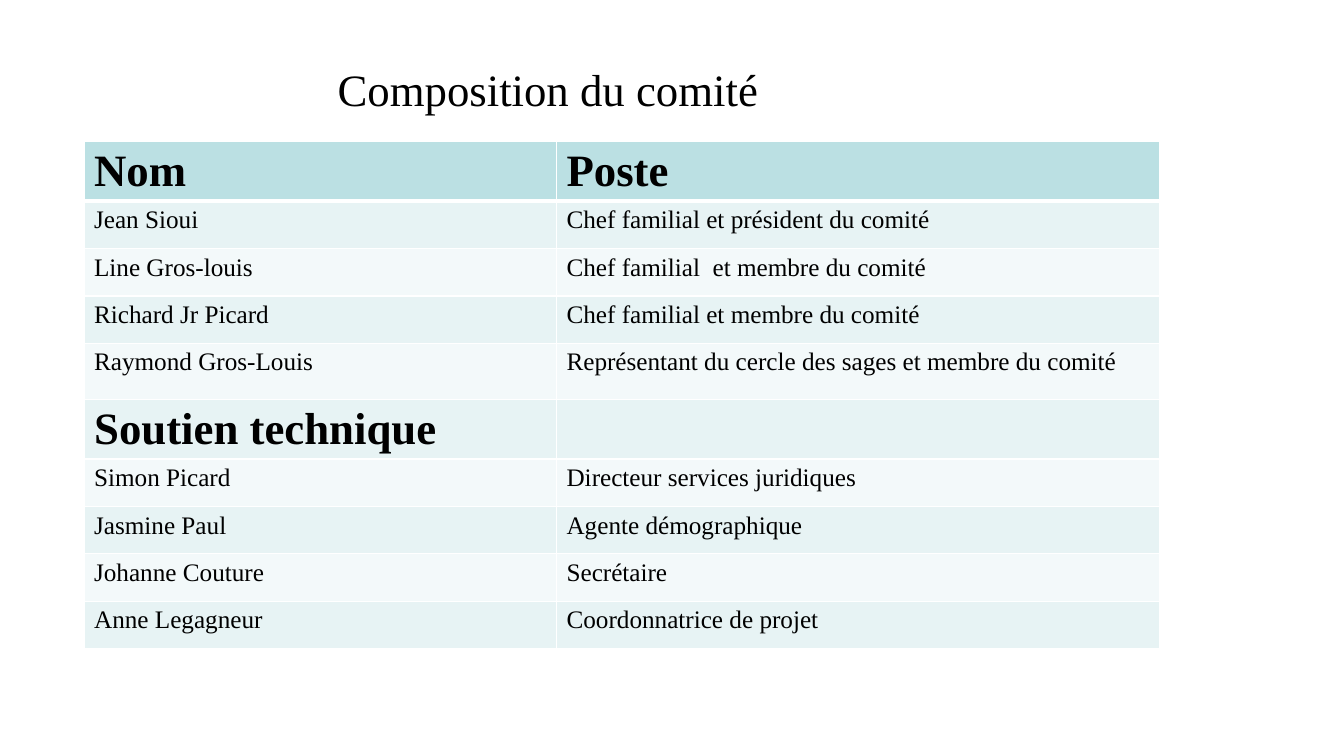
from pptx import Presentation
from pptx.dml.color import RGBColor
from pptx.enum.text import MSO_ANCHOR, PP_ALIGN
from pptx.oxml import parse_xml
from pptx.oxml.ns import nsdecls
from pptx.util import Pt

FONT = "Times New Roman"
INK, WHITE = "000000", "FFFFFF"
HEADER_FILL = "BBE0E3"
BAND_FILLS = ("F3F9FA", "E7F3F4")  # even rows, odd rows

HEADING = {"size": Pt(32), "bold": True}
ENTRY = {"size": Pt(18), "bold": False}

MEMBERS = [
    ("Nom", "Poste"),
    ("Jean Sioui", "Chef familial et président du comité"),
    ("Line Gros-louis", "Chef familial  et membre du comité"),
    ("Richard Jr Picard", "Chef familial et membre du comité"),
    ("Raymond Gros-Louis", "Représentant du cercle des sages et membre du comité"),
    ("Soutien technique", ""),
    ("Simon Picard", "Directeur services juridiques"),
    ("Jasmine Paul", "Agente démographique"),
    ("Johanne Couture", "Secrétaire"),
    ("Anne Legagneur", "Coordonnatrice de projet"),
]
HEADING_ROWS = (0, 5)
TALL_ROW = 4


def color(value):
    return RGBColor.from_string(value)


def style_text(paragraph, align, **font_values):
    paragraph.alignment = align
    paragraph.font.color.rgb = color(INK)
    for name, value in {"name": FONT, **font_values}.items():
        setattr(paragraph.font, name, value)


def set_borders(cell, widths):
    """Draw white borders; widths maps a side (L, R, T, B) to points."""
    properties = cell._tc.get_or_add_tcPr()
    for side, width in widths.items():
        properties.append(parse_xml(
            f'<a:ln{side} {nsdecls("a")} w="{Pt(width)}"><a:solidFill>'
            f'<a:srgbClr val="{WHITE}"/></a:solidFill></a:ln{side}>'))


def add_title(slide, left, top, width, height):
    title = slide.shapes.title
    box = {"left": left, "top": top, "width": width, "height": height}
    for name, value in box.items():
        setattr(title, name, Pt(value))
    title.text_frame.text = "Composition du comité"
    title.text_frame.vertical_anchor = MSO_ANCHOR.MIDDLE
    style_text(title.text_frame.paragraphs[0], PP_ALIGN.CENTER, size=Pt(32))


def add_committee_table(slide, left, top, width, name_width, row_height):
    table = slide.shapes.add_table(
        len(MEMBERS), 2, Pt(left), Pt(top), Pt(width),
        Pt(row_height * len(MEMBERS))).table
    table.columns[0].width = Pt(name_width)
    table.columns[1].width = Pt(width - name_width)

    for r, member in enumerate(MEMBERS):
        # The last regular member has a slightly taller row
        table.rows[r].height = Pt(row_height + (6 if r == TALL_ROW else 0))
        borders = {"L": 1, "R": 1, "T": 3 if r == 1 else 1, "B": 3 if r == 0 else 1}
        for c, text in enumerate(member):
            cell = table.cell(r, c)
            set_borders(cell, borders)
            cell.fill.solid()
            cell.fill.fore_color.rgb = color(BAND_FILLS[r % 2] if r else HEADER_FILL)
            cell.text = text
            style_text(cell.text_frame.paragraphs[0],
                       PP_ALIGN.JUSTIFY if r else PP_ALIGN.LEFT,
                       **(HEADING if r in HEADING_ROWS else ENTRY))


def main():
    deck = Presentation()
    deck.slide_width, deck.slide_height = Pt(960), Pt(540)
    slide = deck.slides.add_slide(deck.slide_layouts[5])
    slide.background.fill.solid()
    slide.background.fill.fore_color.rgb = color(WHITE)

    # Title
    add_title(slide, 53, 32, 677, 63)
    # Committee members and technical support
    add_committee_table(slide, 60, 101, 768.5, 337.5, 33.85)

    deck.save("out.pptx")


if __name__ == "__main__":
    main()
